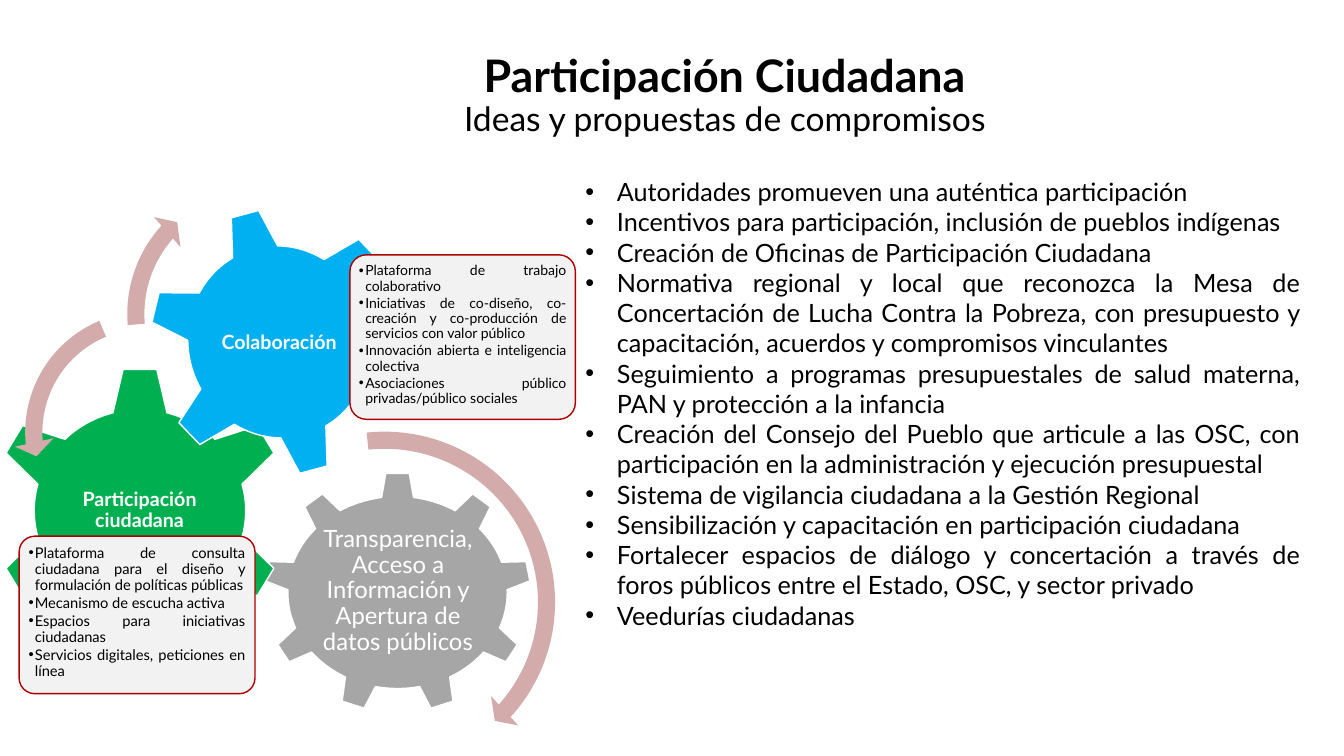
from lxml import etree
from pptx import Presentation
from pptx.dml.color import RGBColor
from pptx.enum import shapes, text
from pptx.oxml import ns
from pptx.util import Pt

FONT = "Lato"
COLORS = {
    "text": "000000",
    "white": "FFFFFF",
    "transparency": "A6A6A6",
    "participation": "00B050",
    "collaboration": "00B0F0",
    "card": "F2F2F2",
    "card_line": "AD0101",
    "arrow": "D3ABAB",
}
PROPOSALS = [
    "Autoridades promueven una auténtica participación",
    "Incentivos para participación, inclusión de pueblos indígenas",
    "Creación de Oficinas de Participación Ciudadana",
    "Normativa regional y local que reconozca la Mesa de Concertación de Lucha Contra la Pobreza, "
    "con presupuesto y capacitación, acuerdos y compromisos vinculantes",
    "Seguimiento a programas presupuestales de salud materna, PAN y protección a la infancia",
    "Creación del Consejo del Pueblo que articule a las OSC, con participación en la "
    "administración y ejecución presupuestal",
    "Sistema de vigilancia ciudadana a la Gestión Regional",
    "Sensibilización y capacitación en participación ciudadana",
    "Fortalecer espacios de diálogo y concertación a través de foros públicos entre el Estado, "
    "OSC, y sector privado",
    "Veedurías ciudadanas",
]
PARTICIPATION_ITEMS = [
    "Plataforma de consulta ciudadana para el diseño y formulación de políticas públicas",
    "Mecanismo de escucha activa",
    "Espacios para iniciativas ciudadanas",
    "Servicios digitales, peticiones en línea",
]
COLLABORATION_ITEMS = [
    "Plataforma de trabajo colaborativo",
    "Iniciativas de co-diseño, co-creación y co-producción de servicios con valor público",
    "Innovación abierta e inteligencia colectiva",
    "Asociaciones público privadas/público sociales",
]


def color(name):
    return RGBColor.from_string(COLORS[name])


def place(shape, box):
    shape.left, shape.top, shape.width, shape.height = map(Pt, box)


def set_font(font, size, color_name="text", bold=False):
    font.name = FONT
    font.size = Pt(size)
    font.bold = bold
    font.color.rgb = color(color_name)


def set_margins(frame, margin):
    frame.margin_left = frame.margin_right = Pt(margin)
    frame.margin_top = frame.margin_bottom = Pt(margin)


def set_bullet(paragraph, indent):
    properties = paragraph._p.get_or_add_pPr()
    properties.set("marL", str(Pt(indent)))
    properties.set("indent", str(-Pt(indent)))
    bullet_font = etree.SubElement(properties, ns.qn("a:buFont"))
    bullet_font.set("typeface", "Arial")
    etree.SubElement(properties, ns.qn("a:buChar")).set("char", "•")


def fill_list(frame, items, size, indent, line_spacing=1.0, space_after=0):
    """Write the items as justified bullets with a hanging indent."""
    for index, item in enumerate(items):
        paragraph = frame.add_paragraph() if index else frame.paragraphs[0]
        paragraph.text = item
        paragraph.alignment = text.PP_ALIGN.JUSTIFY
        paragraph.line_spacing = line_spacing
        paragraph.space_before = Pt(0)
        paragraph.space_after = Pt(space_after)
        set_bullet(paragraph, indent)
        set_font(paragraph.font, size)


def write_title(title):
    place(title, (283, 29.5, 469.5, 104.5))
    frame = title.text_frame
    frame.auto_size = text.MSO_AUTO_SIZE.NONE
    frame.vertical_anchor = text.MSO_ANCHOR.MIDDLE
    frame.margin_bottom = Pt(29.5)
    paragraph = frame.paragraphs[0]
    paragraph.alignment = text.PP_ALIGN.CENTER
    paragraph.line_spacing = 0.9
    heading = paragraph.add_run()
    heading.text = "Participación Ciudadana"
    set_font(heading.font, 32, bold=True)
    paragraph.add_line_break()
    subtitle = paragraph.add_run()
    subtitle.text = "Ideas y propuestas de compromisos"
    set_font(subtitle.font, 24)


def write_proposals(body):
    place(body, (411, 122.5, 525, 334))
    body.text_frame.auto_size = text.MSO_AUTO_SIZE.NONE
    fill_list(body.text_frame, PROPOSALS, 18, 22.5)


def add_shape(slide, kind, box, fill, line=None, adjustments=()):
    shape = slide.shapes.add_shape(kind, *map(Pt, box))
    shape.shadow.inherit = False
    shape.fill.solid()
    shape.fill.fore_color.rgb = color(fill)
    if line:
        shape.line.color.rgb = color(line)
        shape.line.width = Pt(1)
    else:
        shape.line.fill.background()
    for index, value in enumerate(adjustments):
        shape.adjustments[index] = value
    return shape


def add_gear(slide, kind, box, fill, label, label_box, size, bold=True, rotation=0):
    """Add a gear and an upright label over it."""
    gear = add_shape(slide, kind, box, fill, "white")
    gear.rotation = rotation
    frame = slide.shapes.add_textbox(*map(Pt, label_box)).text_frame
    frame.word_wrap = True
    frame.vertical_anchor = text.MSO_ANCHOR.MIDDLE
    set_margins(frame, 1.5)
    paragraph = frame.paragraphs[0]
    paragraph.text = label
    paragraph.alignment = text.PP_ALIGN.CENTER
    paragraph.line_spacing = 0.9
    set_font(paragraph.font, size, "white", bold)


def add_card(slide, box, items, size, margin):
    card = add_shape(slide, shapes.MSO_SHAPE.ROUNDED_RECTANGLE, box, "card", "card_line", [0.1])
    frame = card.text_frame
    frame.word_wrap = True
    frame.vertical_anchor = text.MSO_ANCHOR.TOP
    set_margins(frame, margin)
    fill_list(frame, items, size, 4.5, 0.9, size * 0.15)


def add_arrow(slide, kind, left, top, size, adjustments):
    add_shape(slide, kind, (left, top, size, size), "arrow", adjustments=adjustments)


def main():
    presentation = Presentation()
    presentation.slide_width, presentation.slide_height = Pt(960), Pt(540)
    slide = presentation.slides.add_slide(presentation.slide_layouts[1])
    write_title(slide.shapes.title)
    write_proposals(slide.placeholders[1])

    kinds = shapes.MSO_SHAPE
    add_gear(slide, kinds.GEAR_9, (188.5, 337.5, 191, 171.5), "transparency",
             "Transparencia, Acceso a Información y Apertura de datos públicos",
             (225.5, 378, 117.5, 88.5), 17, bold=False)
    add_gear(slide, kinds.GEAR_6, (-6.5, 261.5, 213, 206.5), "participation",
             "Participación ciudadana", (46, 314, 107.5, 102), 14)
    add_card(slide, (13.7, 383, 168.5, 112.5), PARTICIPATION_ITEMS, 10.5, 3.5)
    add_gear(slide, kinds.GEAR_6, (106.5, 147.5, 186, 193.5), "collaboration",
             "Colaboración", (147, 191, 105, 108), 14, rotation=345)
    add_card(slide, (250, 182, 161, 117.5), COLLABORATION_ITEMS, 10, 3)

    add_arrow(slide, kinds.CIRCULAR_ARROW, 144.7, 300.2, 260,
              [0.047, 2.99, 25.268, 158.386, 0.055])
    add_arrow(slide, kinds.LEFT_CIRCULAR_ARROW, 10, 214.5, 188.6,
              [0.065, 4.3, 104.891, 148.378, 0.075])
    add_arrow(slide, kinds.CIRCULAR_ARROW, 82.8, 122.4, 203.8,
              [0.06, 3.941, 133.138, 105.082, 0.07])
    presentation.save("out.pptx")


if __name__ == "__main__":
    main()
